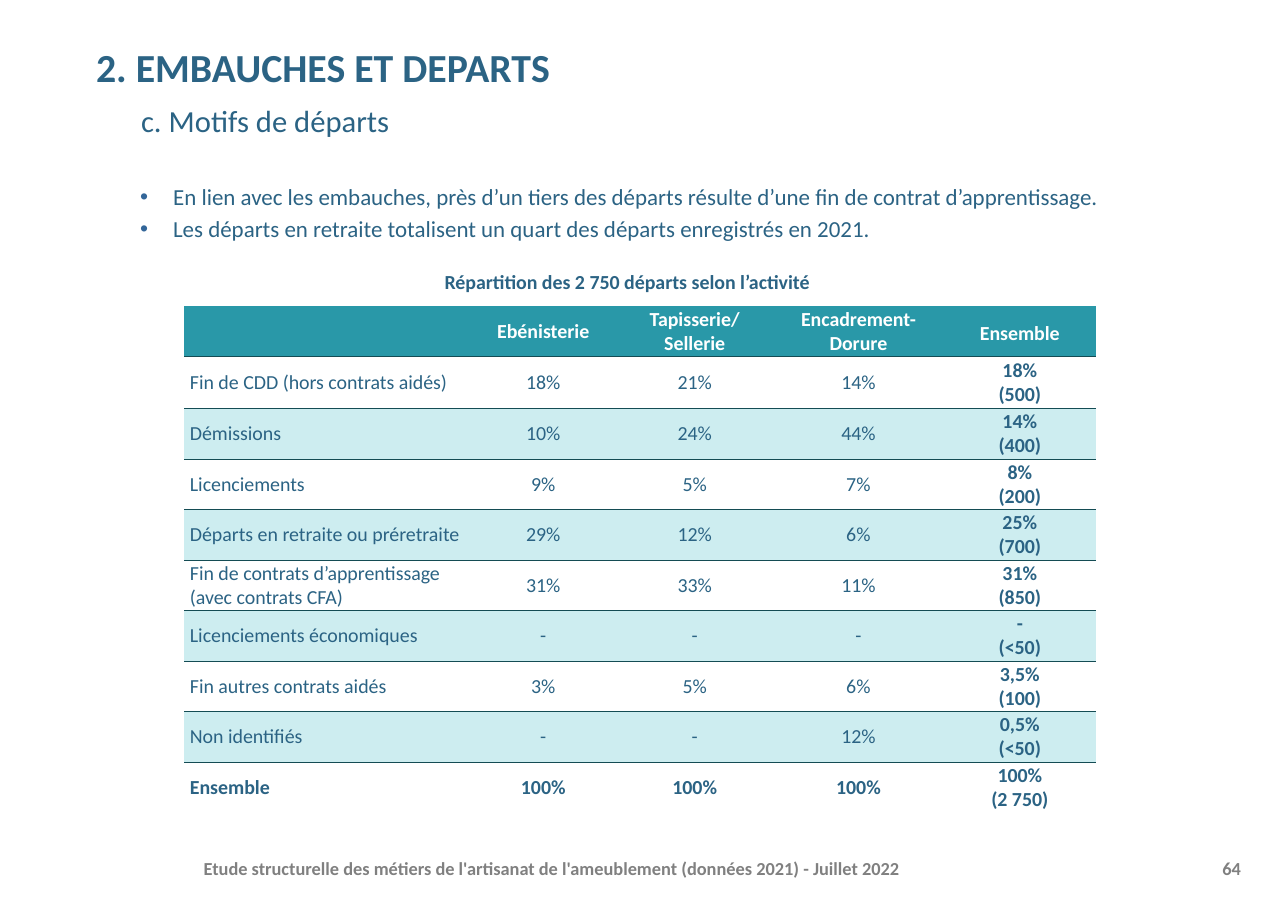
import lxml.etree
import pptx
import pptx.dml.color
import pptx.enum.text
import pptx.oxml.ns
import pptx.util

Pt = pptx.util.Pt
RGBColor = pptx.dml.color.RGBColor
ALIGN = pptx.enum.text.PP_ALIGN
ANCHOR = pptx.enum.text.MSO_ANCHOR
qn = pptx.oxml.ns.qn

FONT = "Calibri"
BLUE = RGBColor(0x2B, 0x63, 0x84)
BULLET_BLUE = RGBColor(0x33, 0x66, 0x99)
GREY = RGBColor(0x80, 0x80, 0x80)
WHITE = RGBColor(0xFF, 0xFF, 0xFF)
TEAL = RGBColor(0x29, 0x98, 0xA8)
PALE_TEAL = RGBColor(0xCD, 0xED, 0xF0)
DARK_TEAL = RGBColor(0x14, 0x4C, 0x54)

PLAIN_TABLE_STYLE = "{2D5ABB26-0587-4C30-8999-92F81FD0307C}"
COLUMN_WIDTHS = [187, 95, 103, 111, 100]
ROW_HEIGHTS = [33, 34] + [33] * 8

BULLETS = [
    "En lien avec les embauches, près d’un tiers des départs résulte d’une fin de contrat d’apprentissage.",
    "Les départs en retraite totalisent un quart des départs enregistrés en 2021.",
]
# A line feed inside a cell starts a new paragraph.
DEPARTURES = [
    ["", "Ebénisterie", "Tapisserie/\nSellerie", "Encadrement- Dorure", "Ensemble"],
    ["Fin de CDD (hors contrats aidés)", "18%", "21%", "14%", "18%\n(500)"],
    ["Démissions", "10%", "24%", "44%", "14%\n(400)"],
    ["Licenciements", "9%", "5%", "7%", "8%\n(200)"],
    ["Départs en retraite ou préretraite", "29%", "12%", "6%", "25%\n(700)"],
    ["Fin de contrats d’apprentissage (avec contrats CFA)", "31%", "33%", "11%", "31%\n(850)"],
    ["Licenciements économiques", "-", "-", "-", "-\n(<50)"],
    ["Fin autres contrats aidés", "3%", "5%", "6%", "3,5%\n(100)"],
    ["Non identifiés", "-", "-", "12%", "0,5%\n(<50)"],
    ["Ensemble", "100%", "100%", "100%", "100%\n(2 750)"],
]


def add_run(paragraph, text, size, color, bold=False):
    run = paragraph.add_run()
    run.text = text
    run.font.name = FONT
    run.font.size = Pt(size)
    run.font.bold = bold
    run.font.color.rgb = color


def next_paragraph(text_frame, index):
    """Return the paragraph already in the frame for index 0, a new one after it."""
    return text_frame.paragraphs[0] if index == 0 else text_frame.add_paragraph()


def set_indent(paragraph, margin, first_line=0):
    properties = paragraph._p.get_or_add_pPr()
    properties.set("marL", str(Pt(margin)))
    properties.set("indent", str(Pt(first_line)))


def add_bullet(paragraph, color):
    properties = paragraph._p.get_or_add_pPr()
    bullet_color = lxml.etree.SubElement(properties, qn("a:buClr"))
    lxml.etree.SubElement(bullet_color, qn("a:srgbClr"), val=str(color))
    lxml.etree.SubElement(properties, qn("a:buFont"), typeface="Arial")
    lxml.etree.SubElement(properties, qn("a:buChar"), char="•")


def add_text_frame(slide, left, top, width, height, inset_x=7.2, inset_y=3.6, anchor=ANCHOR.MIDDLE):
    shape = slide.shapes.add_textbox(Pt(left), Pt(top), Pt(width), Pt(height))
    text_frame = shape.text_frame
    text_frame.word_wrap = True
    text_frame.vertical_anchor = anchor
    text_frame.margin_left = text_frame.margin_right = Pt(inset_x)
    text_frame.margin_top = text_frame.margin_bottom = Pt(inset_y)
    return text_frame


def add_line_of_text(slide, left, top, width, height, text, size, color, alignment):
    paragraph = add_text_frame(slide, left, top, width, height).paragraphs[0]
    paragraph.alignment = alignment
    add_run(paragraph, text, size, color, bold=True)


def add_title(slide):
    text_frame = add_text_frame(slide, 56.9, 28.1, 728.6, 56.9, 0, 0, ANCHOR.TOP)
    heading = text_frame.paragraphs[0]
    set_indent(heading, 5.9)
    add_run(heading, "2. EMBAUCHES ET DEPARTS", 26, BLUE, bold=True)
    subheading = text_frame.add_paragraph()
    set_indent(subheading, 35.3)
    subheading.space_before = Pt(7)
    add_run(subheading, "c. Motifs de départs", 20, BLUE)


def add_bullets(slide):
    text_frame = add_text_frame(slide, 56.9, 115.9, 728.6, 405.4, 0, 3.6, ANCHOR.TOP)
    for index, text in enumerate(BULLETS):
        paragraph = next_paragraph(text_frame, index)
        set_indent(paragraph, 56.2, -21.6)
        add_bullet(paragraph, BULLET_BLUE)
        paragraph.alignment = ALIGN.JUSTIFY
        if index:
            paragraph.space_before = Pt(3)
        add_run(paragraph, text, 15, BLUE)


def set_bottom_border(cell, width):
    line = lxml.etree.Element(qn("a:lnB"), w=str(Pt(width)))
    fill = lxml.etree.SubElement(line, qn("a:solidFill"))
    lxml.etree.SubElement(fill, qn("a:srgbClr"), val=str(DARK_TEAL))
    cell._tc.get_or_add_tcPr().insert(0, line)


def set_cell_fill(cell, color):
    if color is None:
        cell.fill.background()
    else:
        cell.fill.solid()
        cell.fill.fore_color.rgb = color


def fill_cell(cell, text, row, column):
    last_row = len(DEPARTURES) - 1
    last_column = len(COLUMN_WIDTHS) - 1
    cell.vertical_anchor = ANCHOR.MIDDLE
    cell.margin_left = cell.margin_right = Pt(3.6)
    cell.margin_top = cell.margin_bottom = Pt(0)
    if row == 0:
        set_cell_fill(cell, TEAL)
    else:
        set_cell_fill(cell, PALE_TEAL if row % 2 == 0 else None)
    if row < last_row:
        set_bottom_border(cell, 1 if row == last_row - 1 else 0.5)
    if not text:
        return
    bold = row in (0, last_row) or column == last_column
    for index, line in enumerate(text.split("\n")):
        paragraph = next_paragraph(cell.text_frame, index)
        paragraph.alignment = ALIGN.CENTER if column else ALIGN.LEFT
        if row == 0 and column == last_column:
            paragraph.line_spacing = Pt(18)
        add_run(paragraph, line, 13, BLUE if row else WHITE, bold)


def add_departures_table(slide):
    frame = slide.shapes.add_table(
        len(ROW_HEIGHTS), len(COLUMN_WIDTHS), Pt(120.5), Pt(200.2),
        Pt(sum(COLUMN_WIDTHS)), Pt(sum(ROW_HEIGHTS)))
    table = frame.table
    table.horz_banding = False
    table._tbl.tblPr.find(qn("a:tableStyleId")).text = PLAIN_TABLE_STYLE
    for column, width in zip(table.columns, COLUMN_WIDTHS):
        column.width = Pt(width)
    for row, height in zip(table.rows, ROW_HEIGHTS):
        row.height = Pt(height)
    for row, texts in enumerate(DEPARTURES):
        for column, text in enumerate(texts):
            fill_cell(table.cell(row, column), text, row, column)


def main():
    presentation = pptx.Presentation()
    presentation.slide_width = Pt(841.68)
    presentation.slide_height = Pt(595.44)
    slide = presentation.slides.add_slide(presentation.slide_layouts[6])
    add_bullets(slide)
    add_line_of_text(
        slide, 126, 551.5, 635, 31.7,
        "Etude structurelle des métiers de l'artisanat de l'ameublement (données 2021) - Juillet 2022",
        12, GREY, ALIGN.LEFT)
    add_title(slide)
    add_line_of_text(slide, 761.8, 551.5, 56.2, 31.7, "64", 12, GREY, ALIGN.RIGHT)
    add_departures_table(slide)
    add_line_of_text(
        slide, 239.8, 172.8, 339.8, 23,
        "Répartition des 2 750 départs selon l’activité", 13, BLUE, ALIGN.CENTER)
    presentation.save("out.pptx")


if __name__ == "__main__":
    main()
